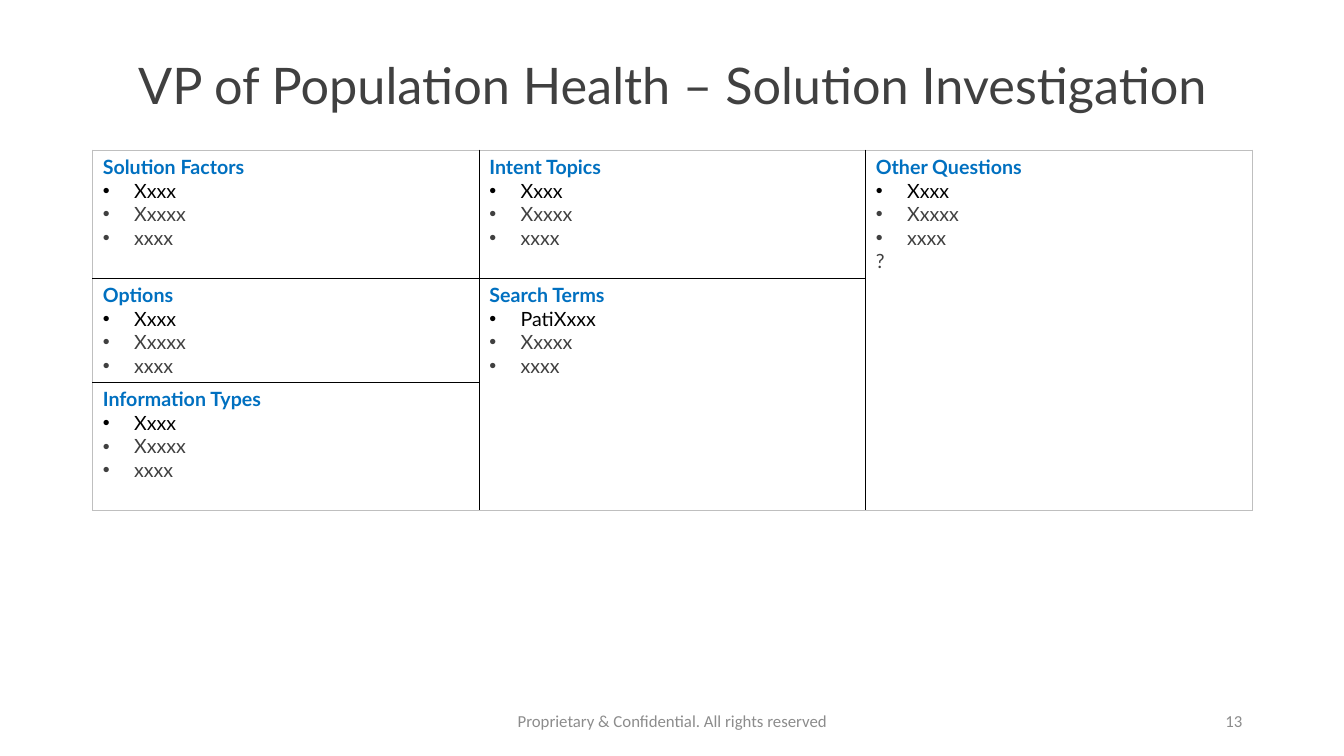
from dataclasses import dataclass

from lxml.etree import SubElement
from pptx import Presentation
from pptx.dml.color import RGBColor
from pptx.enum.text import MSO_ANCHOR, PP_ALIGN
from pptx.oxml import parse_xml
from pptx.oxml.ns import nsdecls, qn
from pptx.util import Inches, Pt

BLUE, BLACK, DARK = "0070C0", "000000", "404040"
GRAY, PALE = "8C8C8C", "BFBFBF"
LEFT, TOP, WIDTH = 0.92, 1.49, 11.5
ROWS = (1.27, 1.03, 1.27)
COLS = 3


@dataclass
class Topic:
    row: int
    col: int
    head: str
    first: str = "Xxxx"
    span: int = 1
    tail: str = ""


@dataclass
class Note:
    left: float
    width: float
    text: str
    align: PP_ALIGN


TOPICS = [
    Topic(0, 0, "Solution Factors"),
    Topic(0, 1, "Intent Topics"),
    Topic(0, 2, "Other Questions", span=3, tail="?"),
    Topic(1, 0, "Options"),
    Topic(1, 1, "Search Terms", first="PatiXxxx", span=2),
    Topic(2, 0, "Information Types"),
]
NOTES = [
    Note(4.42, 4.5, "Proprietary & Confidential. All rights reserved", PP_ALIGN.CENTER),
    Note(9.42, 3, "13", PP_ALIGN.RIGHT),
]


def style(par, size: float, color: str, face: str = "Lato", bold: bool = False) -> None:
    for run in par.runs:
        font = run.font
        font.size, font.name, font.bold = Pt(size), face, bold
        font.color.rgb = RGBColor.from_string(color)


def bullet(par) -> None:
    props = par._p.get_or_add_pPr()
    indent = Inches(0.31)
    props.set("marL", str(indent))
    props.set("indent", str(-indent))
    SubElement(props, qn("a:buFont")).set("typeface", "Arial")
    SubElement(props, qn("a:buChar")).set("char", "•")


def border(cell, colors: dict[str, str]) -> None:
    props = cell._tc.get_or_add_tcPr()
    for spot, (side, color) in enumerate(colors.items()):
        props.insert(spot, parse_xml(
            f'<a:ln{side} {nsdecls("a")} w="{Pt(1)}"><a:solidFill>'
            f'<a:srgbClr val="{color}"/></a:solidFill></a:ln{side}>'))


def fill_topic(table, topic: Topic) -> None:
    end = topic.row + topic.span
    outer = {"L": topic.col == 0, "R": topic.col == COLS - 1,
             "T": topic.row == 0, "B": end == len(ROWS)}
    colors = {side: PALE if edge else BLACK for side, edge in outer.items()}
    for row in range(topic.row, end):
        cell = table.cell(row, topic.col)
        cell.fill.background()
        border(cell, colors)

    cell = table.cell(topic.row, topic.col)
    if topic.span > 1:
        cell.merge(table.cell(end - 1, topic.col))
    lines = [topic.head, topic.first, "Xxxxx", "xxxx"]
    if topic.tail:
        lines.append(topic.tail)
    cell.text_frame.text = "\n".join(lines)
    for spot, par in enumerate(cell.text_frame.paragraphs):
        if 1 <= spot <= 3:
            bullet(par)
        color = (BLUE, BLACK)[spot] if spot < 2 else DARK
        style(par, 14, color, bold=spot == 0)


def add_note(slide, note: Note) -> None:
    box = slide.shapes.add_textbox(
        Inches(note.left), Inches(6.95), Inches(note.width), Inches(0.4))
    frame = box.text_frame
    frame.word_wrap = True
    frame.vertical_anchor = MSO_ANCHOR.MIDDLE
    frame.text = note.text
    par = frame.paragraphs[0]
    par.alignment = note.align
    style(par, 12, GRAY, "Calibri")


def main() -> None:
    deck = Presentation()
    deck.slide_width, deck.slide_height = Inches(13.33), Inches(7.5)
    slide = deck.slides.add_slide(deck.slide_layouts[5])

    # Title
    title = slide.shapes.title
    title.left, title.top = Inches(LEFT), Inches(0.4)
    title.width, title.height = Inches(WIDTH), Inches(0.95)
    title.text_frame.text = "VP of Population Health – Solution Investigation"
    title.text_frame.vertical_anchor = MSO_ANCHOR.MIDDLE
    par = title.text_frame.paragraphs[0]
    par.alignment, par.line_spacing = PP_ALIGN.CENTER, 0.9
    style(par, 36, DARK)

    # Topic table
    table = slide.shapes.add_table(
        len(ROWS), COLS, Inches(LEFT), Inches(TOP),
        Inches(WIDTH), Inches(sum(ROWS))).table
    table.first_row = table.horz_banding = False
    for row, height in zip(table.rows, ROWS):
        row.height = Inches(height)
    for topic in TOPICS:
        fill_topic(table, topic)

    # Footer
    for note in NOTES:
        add_note(slide, note)

    deck.save("out.pptx")


if __name__ == "__main__":
    main()
